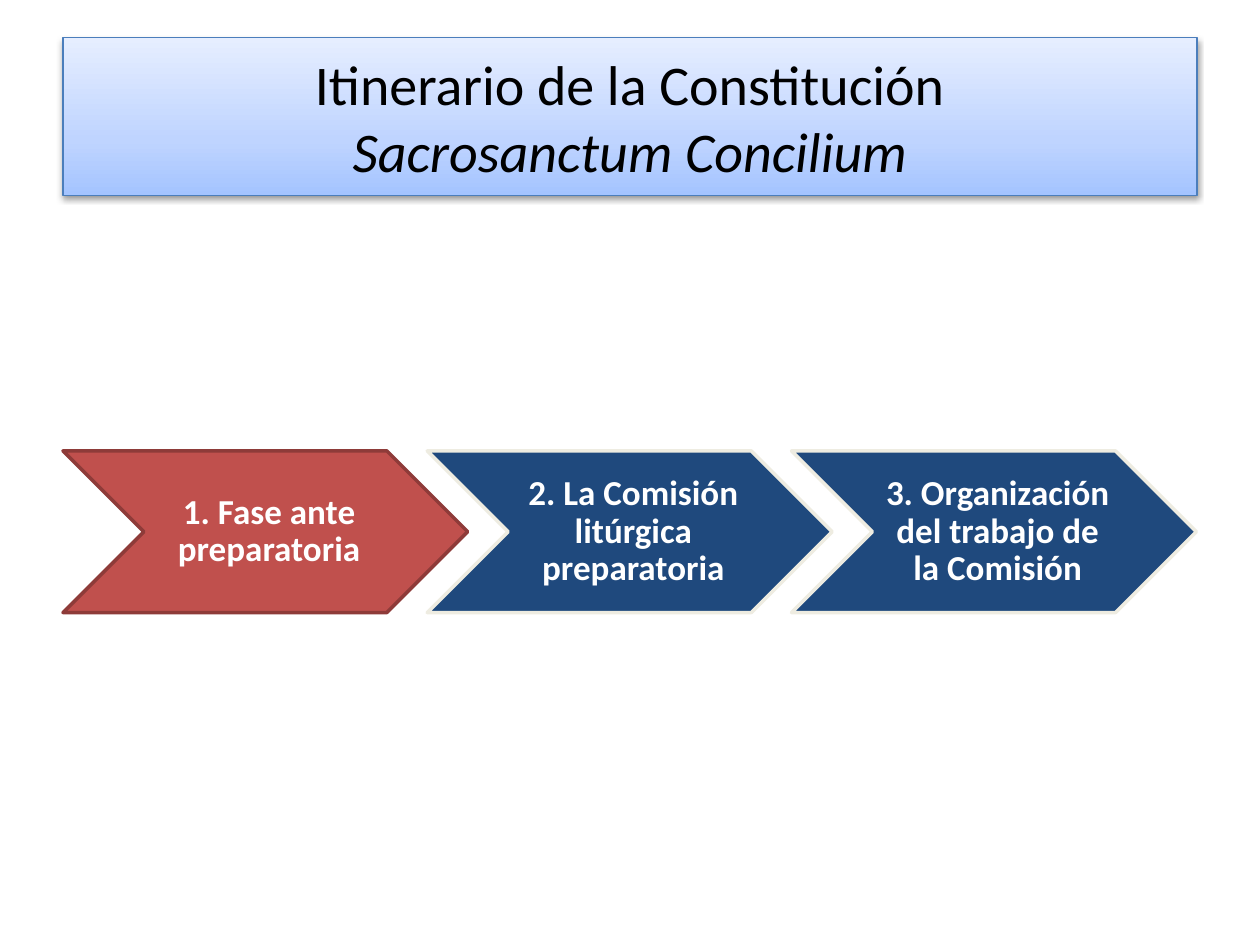
from lxml import etree
from pptx import Presentation
from pptx.dml.color import RGBColor
from pptx.enum.shapes import MSO_SHAPE
from pptx.enum.text import MSO_ANCHOR, MSO_AUTO_SIZE, PP_ALIGN
from pptx.oxml import parse_xml
from pptx.oxml.ns import qn
from pptx.util import Cm, Pt

CHEVRON = MSO_SHAPE.CHEVRON
MIDDLE = MSO_ANCHOR.MIDDLE
NO_FIT = MSO_AUTO_SIZE.NONE
CENTER = PP_ALIGN.CENTER

FONT = "Calibri"
COLORS = {
    "black": "000000",
    "white": "FFFFFF",
    "title_line": "4B7EBC",
    "red": "C0504D",
    "dark_red": "8E3B39",
    "navy": "1F497D",
    "cream": "EEECE1",
}
TITLE_LINES = [("Itinerario de la Constitución", False), ("Sacrosanctum Concilium", True)]
TITLE_STOPS = [(0, "A4C4FF"), (35, "BFD4FF"), (100, "E6EEFF")]
STAGES = [
    ("1. Fase ante preparatoria", "red", "dark_red"),
    ("2. La Comisión litúrgica preparatoria", "navy", "cream"),
    ("3. Organización del trabajo de la Comisión", "navy", "cream"),
]
LEFT, STAGE_TOP = 1.27, 9.09
STAGE_W, STAGE_H = 8.16, 3.26
STAGE_STEP = STAGE_W * 0.9
SHADOW_XML = (
    '<a:effectLst xmlns:a="http://schemas.openxmlformats.org/drawingml/2006/main">'
    '<a:outerShdw blurRad="40000" dist="20000" dir="5400000" rotWithShape="0">'
    '<a:srgbClr val="000000"><a:alpha val="38000"/></a:srgbClr>'
    "</a:outerShdw></a:effectLst>"
)


def rgb(name):
    return RGBColor.from_string(COLORS[name])


def set_line(sp, color, width):
    sp.line.color.rgb = rgb(color)
    sp.line.width = Pt(width)


def add_run(p, text, size, color, bold=False, italic=False):
    r = p.add_run()
    r.text = text
    r.font.name = FONT
    r.font.size = Pt(size)
    r.font.bold = bold
    r.font.italic = italic
    r.font.color.rgb = rgb(color)


def set_gradient(sp, stops, angle):
    sp.fill.gradient()
    sp.fill.gradient_angle = angle
    stop_list = sp.element.spPr.find(qn("a:gradFill")).find(qn("a:gsLst"))
    for old in list(stop_list):
        stop_list.remove(old)
    for position, color in stops:
        stop = etree.SubElement(stop_list, qn("a:gs"), pos=str(position * 1000))
        etree.SubElement(stop, qn("a:srgbClr"), val=color)


def format_title(sp):
    sp.left, sp.top, sp.width, sp.height = Cm(LEFT), Cm(0.76), Cm(22.86), Cm(3.18)
    set_gradient(sp, TITLE_STOPS, 90)
    set_line(sp, "title_line", 0.75)
    sp.element.spPr.append(parse_xml(SHADOW_XML))
    tf = sp.text_frame
    tf.auto_size = NO_FIT
    tf.vertical_anchor = MIDDLE
    p = tf.paragraphs[0]
    p.alignment = CENTER
    for i, (text, italic) in enumerate(TITLE_LINES):
        if i:
            p.add_line_break()
        add_run(p, text, 32, "black", italic=italic)


def add_stage(slide, i, text, fill, line):
    sp = slide.shapes.add_shape(
        CHEVRON, Cm(LEFT + i * STAGE_STEP), Cm(STAGE_TOP), Cm(STAGE_W), Cm(STAGE_H)
    )
    sp.shadow.inherit = False
    sp.fill.solid()
    sp.fill.fore_color.rgb = rgb(fill)
    set_line(sp, line, 2)
    tf = sp.text_frame
    tf.word_wrap = True
    tf.vertical_anchor = MIDDLE
    tf.margin_left = Cm(0.23)
    tf.margin_top = tf.margin_right = tf.margin_bottom = Cm(0.08)
    p = tf.paragraphs[0]
    p.alignment = CENTER
    p.line_spacing = 0.9
    add_run(p, text, 20, "white", bold=True)


def main():
    prs = Presentation()
    prs.slide_width, prs.slide_height = Cm(25.4), Cm(19.05)
    slide = prs.slides.add_slide(prs.slide_layouts[5])
    format_title(slide.shapes.title)
    for i, stage in enumerate(STAGES):
        add_stage(slide, i, *stage)
    prs.save("out.pptx")


if __name__ == "__main__":
    main()
